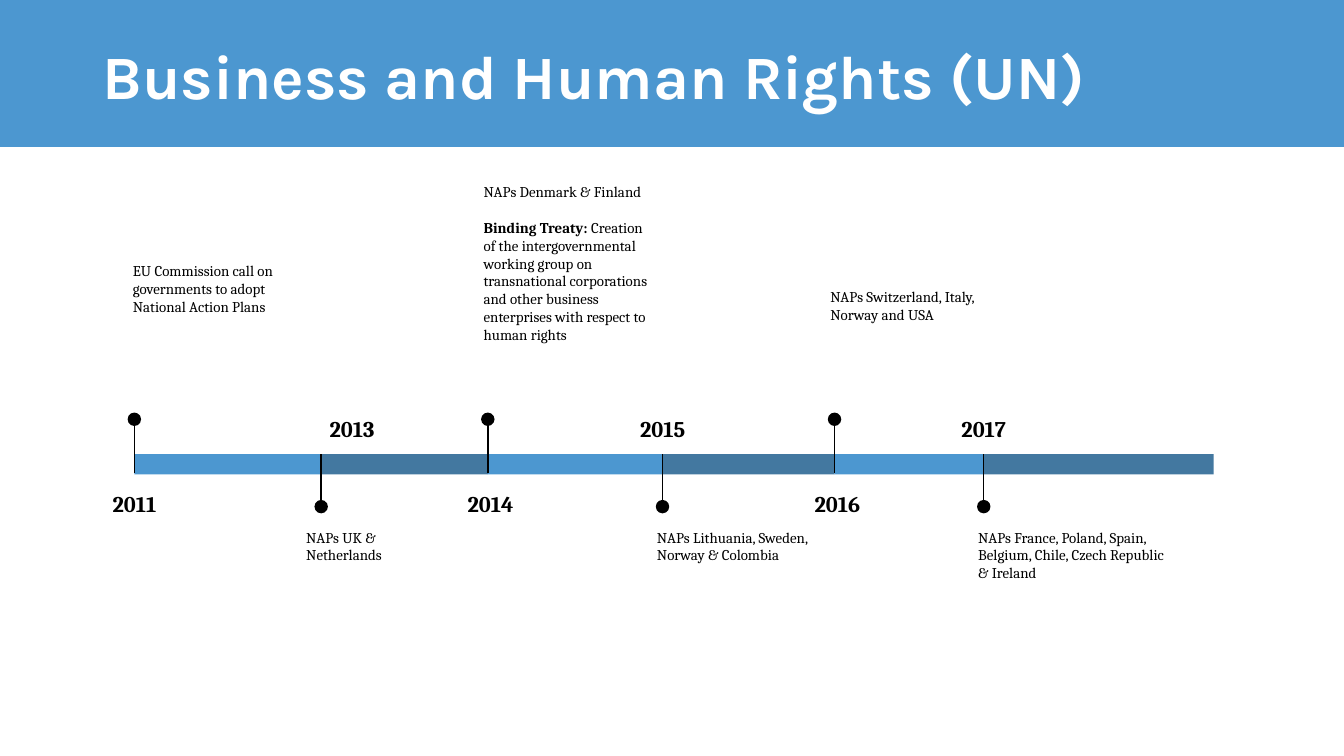
import pptx
import pptx.util
from pptx.dml.color import RGBColor
from pptx.enum.shapes import MSO_CONNECTOR, MSO_SHAPE
from pptx.enum.text import MSO_ANCHOR, MSO_AUTO_SIZE, PP_ALIGN
from pptx.oxml.ns import qn
from lxml import etree

Inches, Pt = pptx.util.Inches, pptx.util.Pt

TITLE = "Business and Human Rights (UN)"
BLUE, DARK_BLUE, BLACK, WHITE = "4C97D0", "4378A0", "000000", "FFFFFF"

# Milestone x, year, year centre, note box (left, top, width, height),
# note paragraphs as (text, bold) runs
MILESTONES = [
    (1.00, "2011", 1.00, (0.89, 1.85, 1.28, 1.22),
     [[("EU Commission call on governments to adopt National Action Plans", False)]]),
    (2.39, "2013", 2.62, (2.18, 3.83, 1.28, 1.03),
     [[("NAPs UK & Netherlands", False)]]),
    (3.63, "2014", 3.65, (3.50, 1.26, 1.46, 1.81),
     [[("NAPs Denmark & Finland", False)],
      [("Binding Treaty: ", True),
       ("Creation of the intergovernmental working group on transnational "
        "corporations and other business enterprises with respect to human rights", False)]]),
    (4.93, "2015", 4.93, (4.79, 3.83, 1.40, 1.03),
     [[("NAPs Lithuania, Sweden, Norway & Colombia", False)]]),
    (6.21, "2016", 6.23, (6.08, 2.04, 1.32, 1.03),
     [[("NAPs Switzerland, Italy, Norway and USA", False)]]),
    (7.32, "2017", 7.32, (7.18, 3.83, 1.68, 1.03),
     [[("NAPs France, Poland, Spain, Belgium, Chile, Czech Republic & Ireland", False)]]),
]
TIMELINE_END = 9.03
BAR_TOP, BAR_HEIGHT = 3.38, 0.15
DOT = 0.1
YEAR_WIDTH, YEAR_HEIGHT = 0.82, 0.41
# Stem top, stem bottom, dot centre, year top
ABOVE = (3.13, 3.52, 3.12, 3.52)
BELOW = (3.38, 3.77, 3.77, 2.96)

TITLE_FONT = {"name": "Karla", "size": Pt(33), "bold": True}
YEAR_FONT = {"name": "Cambria", "size": Pt(12), "bold": True}
NOTE_FONT = {"name": "Cambria", "size": Pt(8)}
YEAR_PARAGRAPH = {"alignment": PP_ALIGN.CENTER, "line_spacing": 1.15}
NOTE_PARAGRAPH = {"alignment": PP_ALIGN.LEFT, "space_after": Pt(9.5)}


def color(hex_value):
    return RGBColor.from_string(hex_value)


def apply(target, values):
    for attribute, value in values.items():
        setattr(target, attribute, value)


def set_frame(frame, side, top):
    apply(frame, {"word_wrap": True, "auto_size": MSO_AUTO_SIZE.NONE,
                  "margin_left": Inches(side), "margin_right": Inches(side),
                  "margin_top": Inches(top), "margin_bottom": Inches(top)})


def add_filled(slide, preset, box, fill):
    shape = slide.shapes.add_shape(preset, *map(Inches, box))
    shape.shadow.inherit = False
    shape.fill.solid()
    shape.fill.fore_color.rgb = color(fill)
    shape.line.fill.background()
    return shape


def add_text(slide, box, paragraphs, font, paragraph_format):
    frame = slide.shapes.add_textbox(*map(Inches, box)).text_frame
    set_frame(frame, 0.1, 0.1)
    for index, runs in enumerate(paragraphs):
        paragraph = frame.add_paragraph() if index else frame.paragraphs[0]
        apply(paragraph, paragraph_format)
        for text, bold in runs:
            run = paragraph.add_run()
            run.text = text
            apply(run.font, {**font, "bold": bold})
            run.font.color.rgb = color(BLACK)


def add_stem(slide, x, top, bottom):
    stem = slide.shapes.add_connector(
        MSO_CONNECTOR.STRAIGHT, Inches(x), Inches(top), Inches(x), Inches(bottom))
    stem.line.color.rgb = color(BLACK)
    stem.line.width = Pt(0.75)
    etree.SubElement(stem.element.spPr, qn("a:effectLst"))


def add_header(slide):
    title = slide.shapes.title
    apply(title, {"left": Inches(0.69), "top": Inches(0.22),
                  "width": Inches(8.62), "height": Inches(0.74)})
    set_frame(title.text_frame, 0.07, 0.04)
    title.text_frame.vertical_anchor = MSO_ANCHOR.MIDDLE
    title.text_frame.text = TITLE
    heading = title.text_frame.paragraphs[0]
    apply(heading, {"alignment": PP_ALIGN.LEFT, "line_spacing": 0.9})
    apply(heading.runs[0].font, TITLE_FONT)
    heading.runs[0].font.color.rgb = color(WHITE)

    band = add_filled(slide, MSO_SHAPE.RECTANGLE, (0, 0, 10, 1.09), BLUE)
    band.line.color.rgb = color(BLUE)
    band.line.width = Pt(1)
    title.element.addprevious(band.element)


def add_timeline(slide):
    starts = [milestone[0] for milestone in MILESTONES]
    for index, (start, end) in enumerate(zip(starts, starts[1:] + [TIMELINE_END])):
        add_filled(slide, MSO_SHAPE.RECTANGLE, (start, BAR_TOP, end - start, BAR_HEIGHT),
                   DARK_BLUE if index % 2 else BLUE)

    for index, (x, year, year_center, note_box, note) in enumerate(MILESTONES):
        stem_top, stem_bottom, dot_center, year_top = BELOW if index % 2 else ABOVE
        add_stem(slide, x, stem_top, stem_bottom)
        add_filled(slide, MSO_SHAPE.OVAL,
                   (x - DOT / 2, dot_center - DOT / 2, DOT, DOT), BLACK)
        add_text(slide, (year_center - YEAR_WIDTH / 2, year_top, YEAR_WIDTH, YEAR_HEIGHT),
                 [[(year, True)]], YEAR_FONT, YEAR_PARAGRAPH)
        add_text(slide, note_box, note, NOTE_FONT, NOTE_PARAGRAPH)


def main():
    presentation = pptx.Presentation()
    presentation.slide_width = Inches(10)
    presentation.slide_height = Inches(10 * 9 / 16)
    slide = presentation.slides.add_slide(presentation.slide_layouts[5])
    add_header(slide)
    add_timeline(slide)
    presentation.save("out.pptx")


if __name__ == "__main__":
    main()
